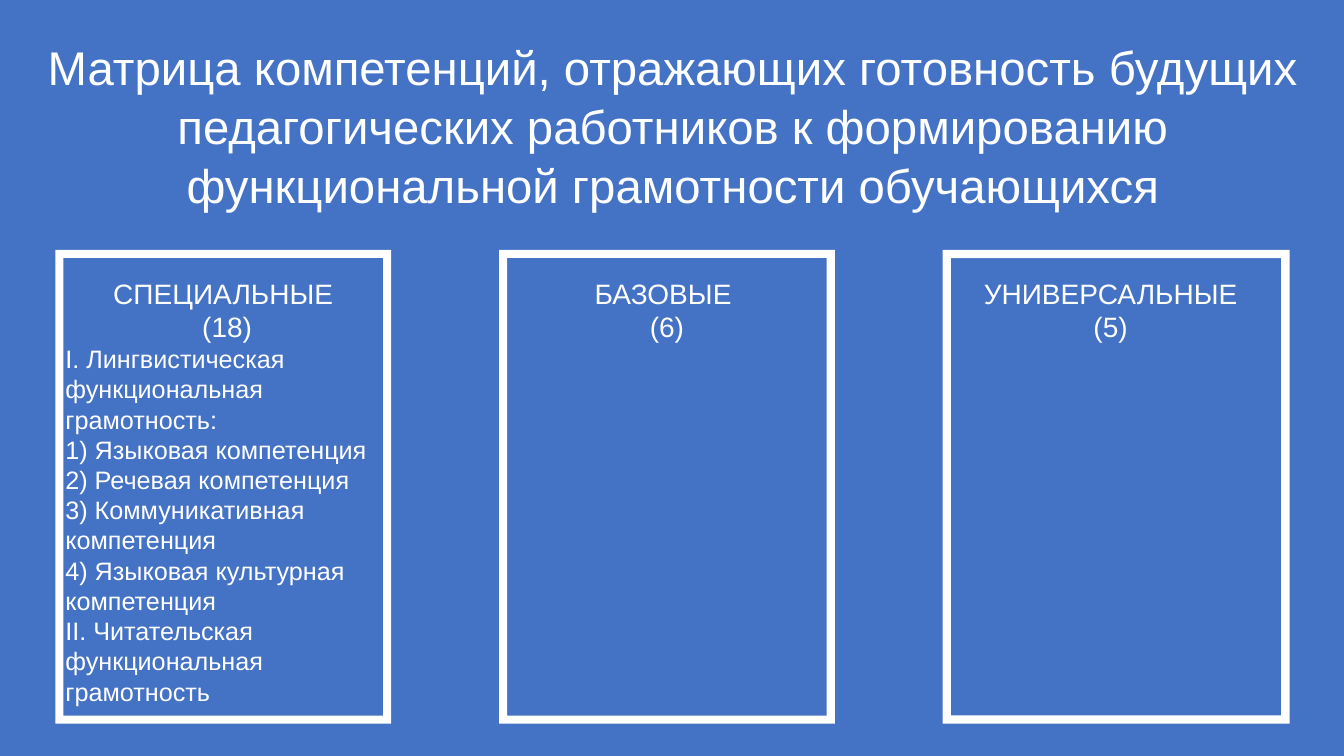
"""Build the slide with the competency matrix in three framed columns."""
import pptx
import pptx.util
from pptx.dml.color import RGBColor
from pptx.enum.shapes import MSO_SHAPE
from pptx.enum.text import MSO_ANCHOR, MSO_AUTO_SIZE, PP_ALIGN

TITLE = ("Матрица компетенций, отражающих готовность будущих педагогических "
         "работников к формированию функциональной грамотности обучающихся")
COLUMNS = [
    {"heading": ["СПЕЦИАЛЬНЫЕ", " (18)"],
     "items": ["I. Лингвистическая функциональная грамотность:",
               "1) Языковая компетенция",
               "2) Речевая компетенция",
               "3) Коммуникативная компетенция",
               "4) Языковая культурная компетенция",
               "II. Читательская функциональная грамотность"],
     "frame_width": 3.33, "text_width": 3.33, "text_height": 4.41},
    {"heading": ["БАЗОВЫЕ ", "(6)"], "items": [],
     "frame_width": 3.33, "text_width": 2.4, "text_height": 0.77},
    {"heading": ["УНИВЕРСАЛЬНЫЕ (5)"], "items": [],
     "frame_width": 3.44, "text_width": 2.78, "text_height": 0.77},
]

BLUE = RGBColor(0x44, 0x72, 0xC4)
WHITE = RGBColor(0xFF, 0xFF, 0xFF)
FONT = "Arial"
COLUMN_LEFT, COLUMN_PITCH, COLUMN_WIDTH = 0.55, 4.4, 3.33
FRAME_TOP, FRAME_HEIGHT, FRAME_BORDER = 2.48, 4.7, 0.024
TEXT_TOP = 2.69


def inches(*lengths):
    """Convert lengths to slide units."""
    return [pptx.util.Inches(length) for length in lengths]


def style(para, size, align):
    """Format a paragraph and its runs."""
    para.alignment = align
    for span in para.runs:
        span.font.name = FONT
        span.font.size = pptx.util.Pt(size)
        span.font.color.rgb = WHITE


def add_title(page):
    """Place and format the title."""
    title = page.shapes.title
    title.left, title.top, title.width, title.height = inches(0.35, 0.31, 12.66, 1.85)
    frame = title.text_frame
    frame.text = TITLE
    frame.word_wrap = True
    frame.auto_size = MSO_AUTO_SIZE.NONE
    frame.vertical_anchor = MSO_ANCHOR.MIDDLE
    frame.paragraphs[0].line_spacing = 1.04
    style(frame.paragraphs[0], 33.8, PP_ALIGN.CENTER)


def add_frame(page, left, width):
    """Draw the white frame of a column."""
    frame = page.shapes.add_shape(
        MSO_SHAPE.FRAME, *inches(left, FRAME_TOP, width, FRAME_HEIGHT))
    frame.adjustments[0] = FRAME_BORDER
    frame.shadow.inherit = False
    frame.fill.solid()
    frame.fill.fore_color.rgb = WHITE
    frame.line.fill.background()


def add_text(page, left, column):
    """Write the heading and items of a column, centred in it."""
    text_left = left + (COLUMN_WIDTH - column["text_width"]) / 2
    box = page.shapes.add_textbox(
        *inches(text_left, TEXT_TOP, column["text_width"], column["text_height"]))
    frame = box.text_frame
    frame.word_wrap = True
    frame.auto_size = MSO_AUTO_SIZE.SHAPE_TO_FIT_TEXT
    frame.text = "\n".join(column["heading"] + column["items"])
    heading_count = len(column["heading"])
    for index, para in enumerate(frame.paragraphs):
        if index < heading_count:
            style(para, 20, PP_ALIGN.CENTER)
        else:
            style(para, 18, PP_ALIGN.LEFT)


def main():
    """Assemble and save the deck."""
    deck = pptx.Presentation()
    deck.slide_width, deck.slide_height = inches(13.33, 7.5)
    page = deck.slides.add_slide(deck.slide_layouts.get_by_name("Title Only"))
    page.background.fill.solid()
    page.background.fill.fore_color.rgb = BLUE
    add_title(page)
    for index, column in enumerate(COLUMNS):
        left = COLUMN_LEFT + index * COLUMN_PITCH
        add_frame(page, left, column["frame_width"])
        add_text(page, left, column)
    deck.save("out.pptx")


if __name__ == "__main__":
    main()
